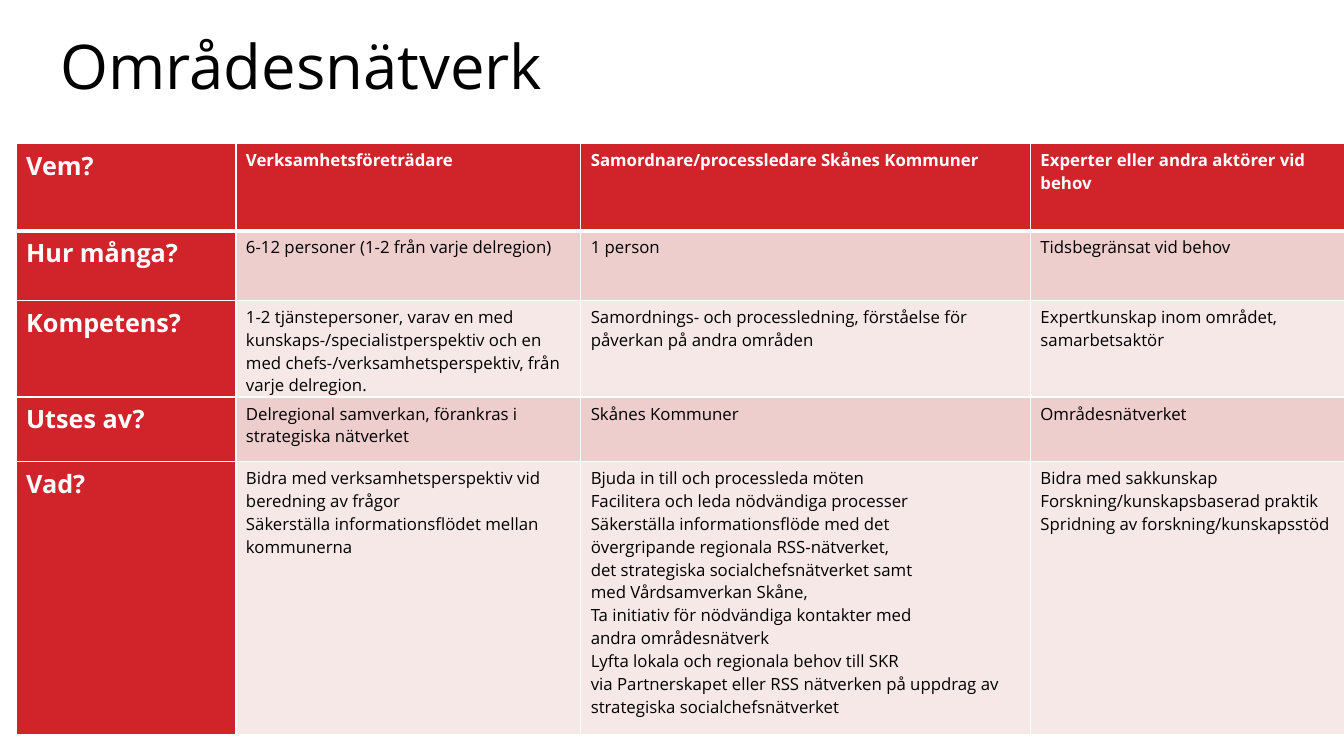
from lxml import etree
from pptx import Presentation
from pptx.dml.color import RGBColor
from pptx.enum.text import MSO_ANCHOR
from pptx.oxml.ns import qn
from pptx.util import Inches, Pt

FONT = "Open Sans"
RED, PINK, PALE = "D1232A", "EECDCD", "F7E8E8"
WHITE, BLACK = "FFFFFF", "000000"

COLUMN_WIDTHS = [2.18, 3.42, 4.46, 3.12]
ROW_HEIGHTS = [0.87, 0.69, 0.96, 0.64, 2.71]
ROWS = [
    ["Vem?", "Verksamhetsföreträdare",
     "Samordnare/processledare Skånes Kommuner",
     "Experter eller andra aktörer vid behov"],
    ["Hur många?", "6-12 personer (1-2 från varje delregion)",
     "1 person", "Tidsbegränsat vid behov"],
    ["Kompetens?",
     "1-2 tjänstepersoner, varav en med kunskaps-/specialistperspektiv och en "
     "med chefs-/verksamhetsperspektiv, från varje delregion.",
     "Samordnings- och processledning, förståelse för påverkan på andra områden",
     "Expertkunskap inom området, samarbetsaktör"],
    ["Utses av?", "Delregional samverkan, förankras i strategiska nätverket",
     "Skånes Kommuner", "Områdesnätverket"],
    ["Vad?",
     "Bidra med verksamhetsperspektiv vid beredning av frågor\n"
     "Säkerställa informationsflödet mellan kommunerna",
     "Bjuda in till och processleda möten\n"
     "Facilitera och leda nödvändiga processer\n"
     "Säkerställa informationsflöde med det\n"
     "övergripande regionala RSS-nätverket,\n"
     "det strategiska socialchefsnätverket samt\n"
     "med Vårdsamverkan Skåne,\n"
     "Ta initiativ för nödvändiga kontakter med\n"
     "andra områdesnätverk\n"
     "Lyfta lokala och regionala behov till SKR\n"
     "via Partnerskapet eller RSS nätverken på uppdrag av "
     "strategiska socialchefsnätverket",
     "Bidra med sakkunskap\n"
     "Forskning/kunskapsbaserad praktik\n"
     "Spridning av forskning/kunskapsstöd"],
]


def color(value):
    return RGBColor.from_string(value)


def format_text(text_frame, size, text_color, bold=False):
    for paragraph in text_frame.paragraphs:
        for run in paragraph.runs:
            run.font.name = FONT
            run.font.size = Pt(size)
            run.font.bold = bold
            run.font.color.rgb = color(text_color)


def set_borders(cell, bottom_width):
    properties = cell._tc.get_or_add_tcPr()
    widths = {"a:lnL": 1, "a:lnR": 1, "a:lnT": 1, "a:lnB": bottom_width}
    # Border lines come before the fill in the cell properties
    for index, (tag, width) in enumerate(widths.items()):
        line = etree.Element(qn(tag), w=str(Pt(width)))
        fill = etree.SubElement(line, qn("a:solidFill"))
        etree.SubElement(fill, qn("a:srgbClr"), val=WHITE)
        properties.insert(index, line)


def add_title(slide, left, top, width, height):
    shape = slide.shapes.add_textbox(
        Inches(left), Inches(top), Inches(width), Inches(height))
    text_frame = shape.text_frame
    text_frame.word_wrap = True
    text_frame.vertical_anchor = MSO_ANCHOR.TOP
    text_frame.margin_left = Inches(0.21)
    text_frame.text = "Områdesnätverk"
    text_frame.paragraphs[0].line_spacing = 0.9
    format_text(text_frame, 44, BLACK)


def add_network_table(slide, left, top):
    table = slide.shapes.add_table(
        len(ROWS), len(COLUMN_WIDTHS), Inches(left), Inches(top),
        Inches(sum(COLUMN_WIDTHS)), Inches(sum(ROW_HEIGHTS))).table
    for column, width in zip(table.columns, COLUMN_WIDTHS):
        column.width = Inches(width)
    for row, height in zip(table.rows, ROW_HEIGHTS):
        row.height = Inches(height)

    for row_index, texts in enumerate(ROWS):
        band = PINK if row_index % 2 else PALE
        for column_index, text in enumerate(texts):
            is_header = row_index == 0 or column_index == 0
            cell = table.cell(row_index, column_index)
            cell.text_frame.text = text
            format_text(cell.text_frame, 12 if column_index else 18,
                        WHITE if is_header else BLACK, is_header)
            cell.fill.solid()
            cell.fill.fore_color.rgb = color(RED if is_header else band)
            set_borders(cell, 1 if row_index else 3)


def main():
    presentation = Presentation()
    presentation.slide_width = Inches(13.33)
    presentation.slide_height = Inches(7.5)
    slide = presentation.slides.add_slide(presentation.slide_layouts[6])
    add_title(slide, 0.39, 0.31, 10.26, 0.97)
    add_network_table(slide, 0.16, 1.42)
    presentation.save("out.pptx")


if __name__ == "__main__":
    main()
